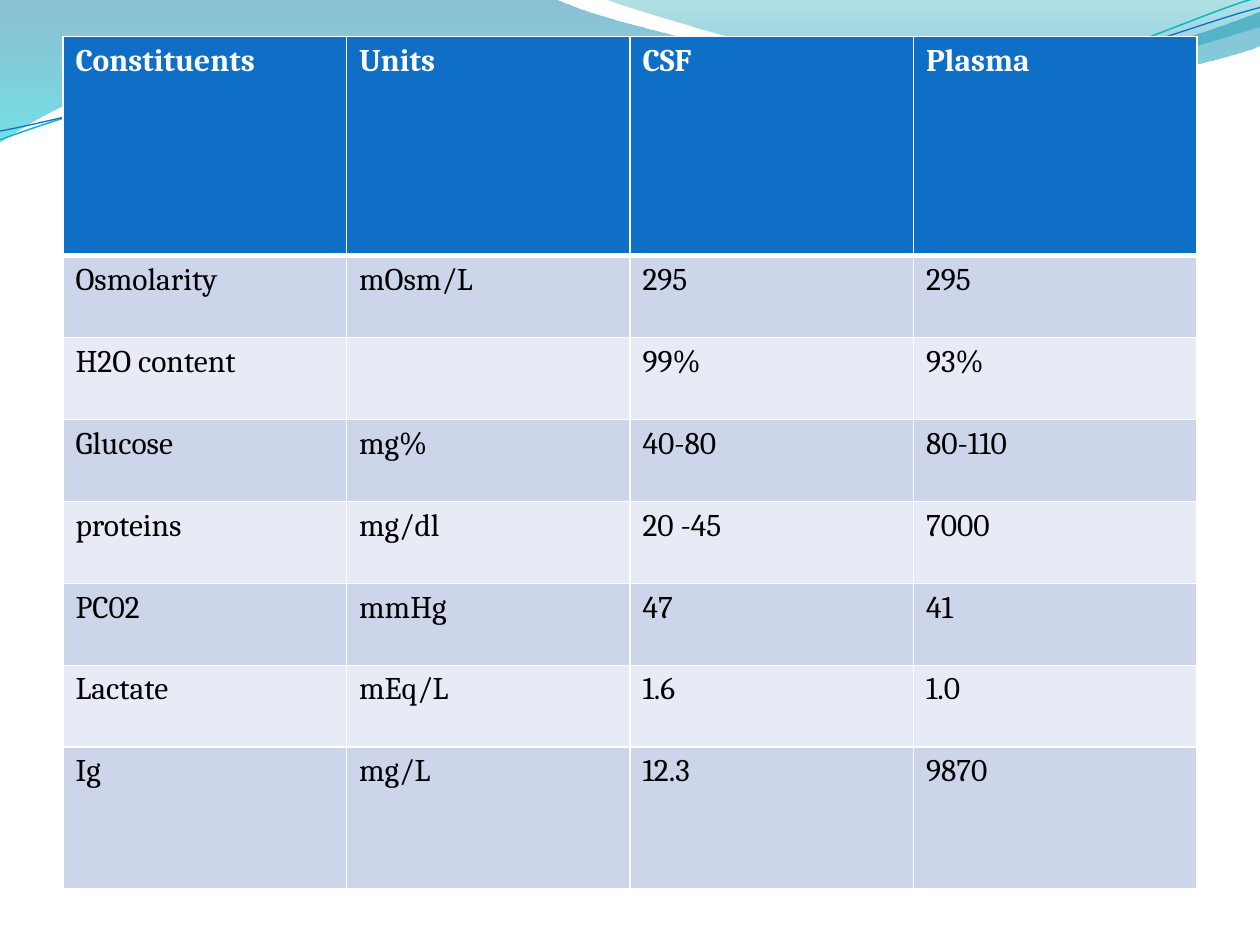
from math import cos, radians, sin

from lxml.etree import SubElement
from pptx import Presentation
from pptx.dml.color import RGBColor
from pptx.oxml.ns import qn
from pptx.util import Inches, Pt

COLORS = {
    "white": "FFFFFF", "black": "000000", "header": "0F6FC6",
    "band_dark": "CCD5EA", "band_light": "E7EBF5",
    "teal_line": "0AB8BF", "blue_line": "0F6FC6",
    "deep_blue": "0074A1", "aqua": "00C6CF", "sea": "00A1A9", "sky": "008BBF",
}
FONT = "Cambria"
TILT = -2.7

# A two-value point is a straight edge; a six-value one is a Bezier curve.
LEFT_WAVE = [
    (0, 0), (4.4, -0.01), (4.76, 0.17, 6.64, 0.63, 7.58, 0.63),
    (8.53, 0.63, 9.58, 0.26, 10, 0.09), (10.01, 0.36),
    (9.83, 0.44, 8.7, 0.76, 7.46, 0.75), (6.22, 0.75, 3.82, 0.28, 2.57, 0.34),
    (1.29, 0.36, 0.46, 0.83, -0.01, 1.13), (0, 0),
]
RIGHT_WAVE = [
    (4.79, -0.01), (5.09, 0.11, 6.82, 0.62, 7.69, 0.65),
    (8.56, 0.69, 9.61, 0.32, 10, 0.21), (10, 0), (4.79, -0.01),
]
TEAL_CURVE = [
    (0, 1.11), (0.48, 0.93, 1.58, 0.57, 2.77, 0.52),
    (3.95, 0.47, 5.93, 0.89, 7.13, 0.8), (8.33, 0.71, 9.38, 0.15, 9.98, -0.02),
]
BLUE_CURVE = [
    (0, 1.04), (0.47, 0.96, 1.64, 0.61, 2.83, 0.56),
    (4.03, 0.51, 5.97, 0.84, 7.17, 0.75), (8.36, 0.67, 9.41, 0.21, 10, 0.06),
]

ROWS = [
    ("Constituents", "Units", "CSF", "Plasma"),
    ("Osmolarity", "mOsm/L", "295", "295"),
    ("H2O content", "", "99%", "93%"),
    ("Glucose", "mg%", "40-80", "80-110"),
    ("proteins", "mg/dl", "20 -45", "7000"),
    ("PC02", "mmHg", "47", "41"),
    ("Lactate", "mEq/L", "1.6", "1.0"),
    ("Ig", "mg/L", "12.3", "9870"),
]
HEADER_HEIGHT, ROW_HEIGHT, LAST_HEIGHT = 1.74, 0.65, 1.12


def rgb(name):
    return RGBColor.from_string(COLORS[name])


def pairs(segment):
    return list(zip(segment[::2], segment[1::2]))


def turn(outline, center, degrees):
    """Rotate every point of an outline clockwise about a center."""
    c, s = cos(radians(degrees)), sin(radians(degrees))
    turned = []
    for segment in outline:
        offsets = [(x - center[0], y - center[1]) for x, y in pairs(segment)]
        turned.append(tuple(
            value for dx, dy in offsets
            for value in (center[0] + dx * c - dy * s, center[1] + dx * s + dy * c)))
    return turned


def add_outline(shapes, outline, close):
    """Draw the control points as edges, then join each three into a curve."""
    first, *rest = [(Inches(x), Inches(y))
                    for segment in outline for x, y in pairs(segment)]
    builder = shapes.build_freeform(*first)
    builder.add_line_segments(rest, close=close)
    shape = builder.convert_to_shape()
    shape.shadow.inherit = False
    edges = iter(list(shape._element.spPr.iter(qn("a:lnTo"))))
    for segment in outline[1:]:
        edge = next(edges)
        if len(segment) == 6:
            curve = edge.makeelement(qn("a:cubicBezTo"))
            edge.addprevious(curve)
            for control in (edge, next(edges), next(edges)):
                curve.append(control[0])
                control.getparent().remove(control)
    return shape


def add_wave(page, outline, stops):
    """Add a filled wave; each stop is (position, colour, opacity percent)."""
    wave = add_outline(page.shapes, outline, close=True)
    wave.line.fill.background()
    wave.fill.gradient()
    wave.fill.gradient_angle = 270
    for stop, (position, color, _) in zip(wave.fill.gradient_stops, stops):
        stop.position = position
        stop.color.rgb = rgb(color)
    tints = wave._element.spPr.iter(qn("a:srgbClr"))
    for tint, (_, _, opacity) in zip(list(tints), stops):
        SubElement(tint, qn("a:alpha"), val=str(opacity * 1000))


def add_curve(group, outline, center, color, width):
    """Add a thin curve as a level shape that is tilted about its center."""
    curve = add_outline(group.shapes, turn(outline, center, -TILT), close=False)
    curve.rotation = TILT
    curve.fill.background()
    curve.line.color.rgb = rgb(color)
    curve.line.width = Pt(width)


def add_borders(cell, bottom):
    properties = cell._tc.get_or_add_tcPr()
    for side, width in (("L", 1), ("R", 1), ("T", 1), ("B", bottom)):
        border = SubElement(properties, qn(f"a:ln{side}"), w=str(Pt(width)))
        fill = SubElement(border, qn("a:solidFill"))
        SubElement(fill, qn("a:srgbClr"), val=COLORS["white"])


def format_cell(cell, text, row):
    is_header = row == 0
    add_borders(cell, bottom=3 if is_header else 1)
    cell.fill.solid()
    band = "band_dark" if row % 2 else "band_light"
    cell.fill.fore_color.rgb = rgb("header" if is_header else band)
    cell.text = text
    font = cell.text_frame.paragraphs[0].font
    font.name, font.size, font.bold = FONT, Pt(18), is_header
    font.color.rgb = rgb("white" if is_header else "black")


def add_constituents_table(page, deck):
    heights = [HEADER_HEIGHT] + [ROW_HEIGHT] * (len(ROWS) - 2) + [LAST_HEIGHT]
    margin = deck.slide_width // 20
    table = page.shapes.add_table(
        len(ROWS), len(ROWS[0]), margin, Inches(0.29),
        deck.slide_width - 2 * margin, Inches(sum(heights))).table
    for row, (texts, height) in enumerate(zip(ROWS, heights)):
        table.rows[row].height = Inches(height)
        for column, text in enumerate(texts):
            format_cell(table.cell(row, column), text, row)


def main():
    deck = Presentation()
    deck.slide_width, deck.slide_height = Inches(10), Inches(7.5)
    page = deck.slides.add_slide(deck.slide_layouts[6])
    add_wave(page, LEFT_WAVE, [(0, "deep_blue", 45), (1, "aqua", 55)])
    add_wave(page, RIGHT_WAVE, [(0, "sea", 30), (0.8, "sky", 45)])
    group = page.shapes.add_group_shape()
    add_curve(group, TEAL_CURVE, (4.99, 0.58), "teal_line", 0.85)
    add_curve(group, BLUE_CURVE, (5, 0.59), "blue_line", 0.75)
    add_constituents_table(page, deck)
    deck.save("out.pptx")


if __name__ == "__main__":
    main()
